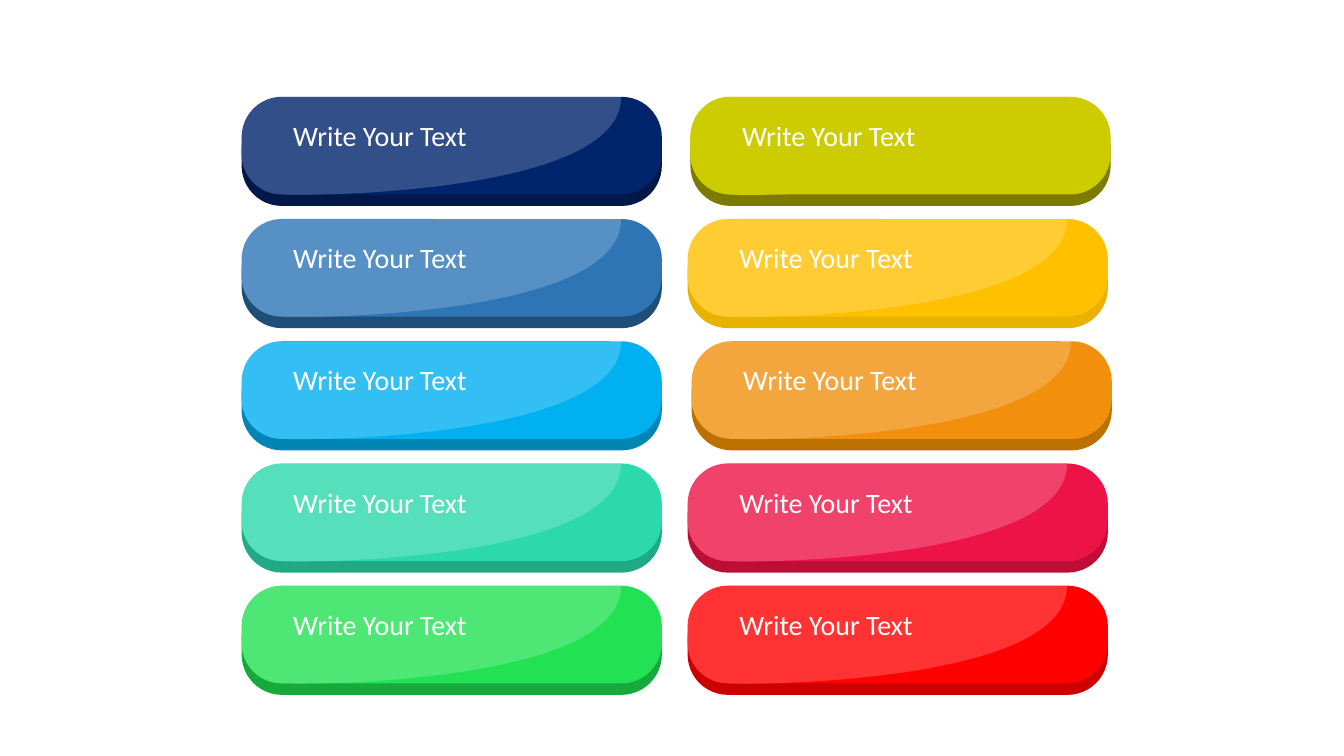
"""Build a slide with two columns of glossy buttons."""
from dataclasses import dataclass

from lxml import etree
from pptx import Presentation
from pptx import util as u
from pptx.dml import color
from pptx.enum import shapes, text
from pptx.oxml import ns


@dataclass(frozen=True)
class Theme:
    """Colours, type and label of the buttons."""
    label: str = "Write Your Text"
    font: str = "Calibri"
    size: int = 20
    ink: str = "FFFFFF"
    shine: str = "FFFFFF"
    alpha: int = 20
    left: tuple = (("00246C", "001848"), ("2E75B6", "1F4E79"),
                   ("00B0F0", "0085B4"), ("2BD9AB", "1FA985"),
                   ("22E254", "16AA3D"))
    right: tuple = (("CCCC00", "7D7A00"), ("FFC000", "EAB200"),
                    ("F2900E", "BC7000"), ("ED1347", "BE0E38"),
                    ("FF0000", "CC0000"))
    flat: str = "CCCC00"


THEME = Theme()
WIDE, HIGH, LIP = 10.59, 2.46, 0.29
TOP, STEP = 2.44, 3.08
LEFT = (6.09,) * 5
RIGHT = (17.4, 17.33, 17.43, 17.33, 17.33)


def style(item, **values):
    """Set each named format value on an item."""
    for name, value in values.items():
        setattr(item, name, value)


def paint(shape, hue, alpha=100):
    """Fill a shape with one colour, without line or shadow."""
    shape.shadow.inherit = False
    shape.line.fill.background()
    shape.fill.solid()
    shape.fill.fore_color.rgb = color.RGBColor.from_string(hue)
    if alpha < 100:
        tint = shape.fill._xPr.find(".//" + ns.qn("a:srgbClr"))
        etree.SubElement(tint, ns.qn("a:alpha"), val=str(alpha * 1000))


def bow(line, *pulls):
    """Turn a straight segment into a curve drawn by two pull points."""
    line.tag = ns.qn("a:cubicBezTo")
    for slot, (dx, dy) in enumerate(pulls):
        spot = etree.Element(ns.qn("a:pt"),
                             x=str(u.Cm(dx)), y=str(u.Cm(dy)))
        line.insert(slot, spot)


def plate(group, x, y, hue):
    """Add one rounded bar."""
    bar = group.shapes.add_shape(
        shapes.MSO_SHAPE.ROUNDED_RECTANGLE,
        u.Cm(x), u.Cm(y), u.Cm(WIDE), u.Cm(HIGH))
    bar.adjustments[0] = 0.412
    paint(bar, hue)


def gloss(group, x, y, hue, alpha):
    """Add the curved shine over a bar."""
    bend, near, end = 1.01, 0.45, 9.56
    dots = ((0, bend), (bend, 0), (end, 0), (bend, HIGH), (0, HIGH - bend))
    spots = [(u.Cm(x + dx), u.Cm(y + dy)) for dx, dy in dots]
    pen = group.shapes.build_freeform(*spots[0])
    pen.add_line_segments(spots[1:], close=True)
    shape = pen.convert_to_shape()
    head, _, sweep, foot = list(shape._element.iter(ns.qn("a:lnTo")))
    bow(head, (0, near), (near, 0))
    bow(sweep, (9.6, 2.51), (1.32, 2.51))
    bow(foot, (near, HIGH), (0, HIGH - near))
    paint(shape, hue, alpha)


def label(group, x, y, back):
    """Add the button text, on a plain back if one is given."""
    box = group.shapes.add_textbox(
        u.Cm(x + 1.02), u.Cm(y + 0.42), u.Cm(4.93), u.Cm(1.11))
    if back:
        paint(box, back)
    frame = box.text_frame
    style(frame, word_wrap=False,
          auto_size=text.MSO_AUTO_SIZE.SHAPE_TO_FIT_TEXT)
    line = frame.paragraphs[0]
    line.alignment = text.PP_ALIGN.CENTER
    run = line.add_run()
    run.text = THEME.label
    style(run.font, name=THEME.font, size=u.Pt(THEME.size))
    run.font.color.rgb = color.RGBColor.from_string(THEME.ink)


def button(slide, x, y, face, edge):
    """Place one grouped button with its corner at x, y."""
    group = slide.shapes.add_group_shape()
    flat = face == THEME.flat
    plate(group, x, y + LIP, edge)
    plate(group, x, y, face)
    gloss(group, x, y, face if flat else THEME.shine,
          100 if flat else THEME.alpha)
    label(group, x, y, face if flat else None)


def column(slide, places, hues):
    """Stack buttons at even steps down the slide."""
    for row, (x, (face, edge)) in enumerate(zip(places, hues)):
        button(slide, x, TOP + row * STEP, face, edge)


def main():
    """Build and save the deck."""
    deck = Presentation()
    style(deck, slide_width=u.Cm(33.87), slide_height=u.Cm(19.05))
    slide = deck.slides.add_slide(deck.slide_layouts[6])
    column(slide, LEFT, THEME.left)
    column(slide, RIGHT, THEME.right)
    deck.save("out.pptx")


if __name__ == "__main__":
    main()
